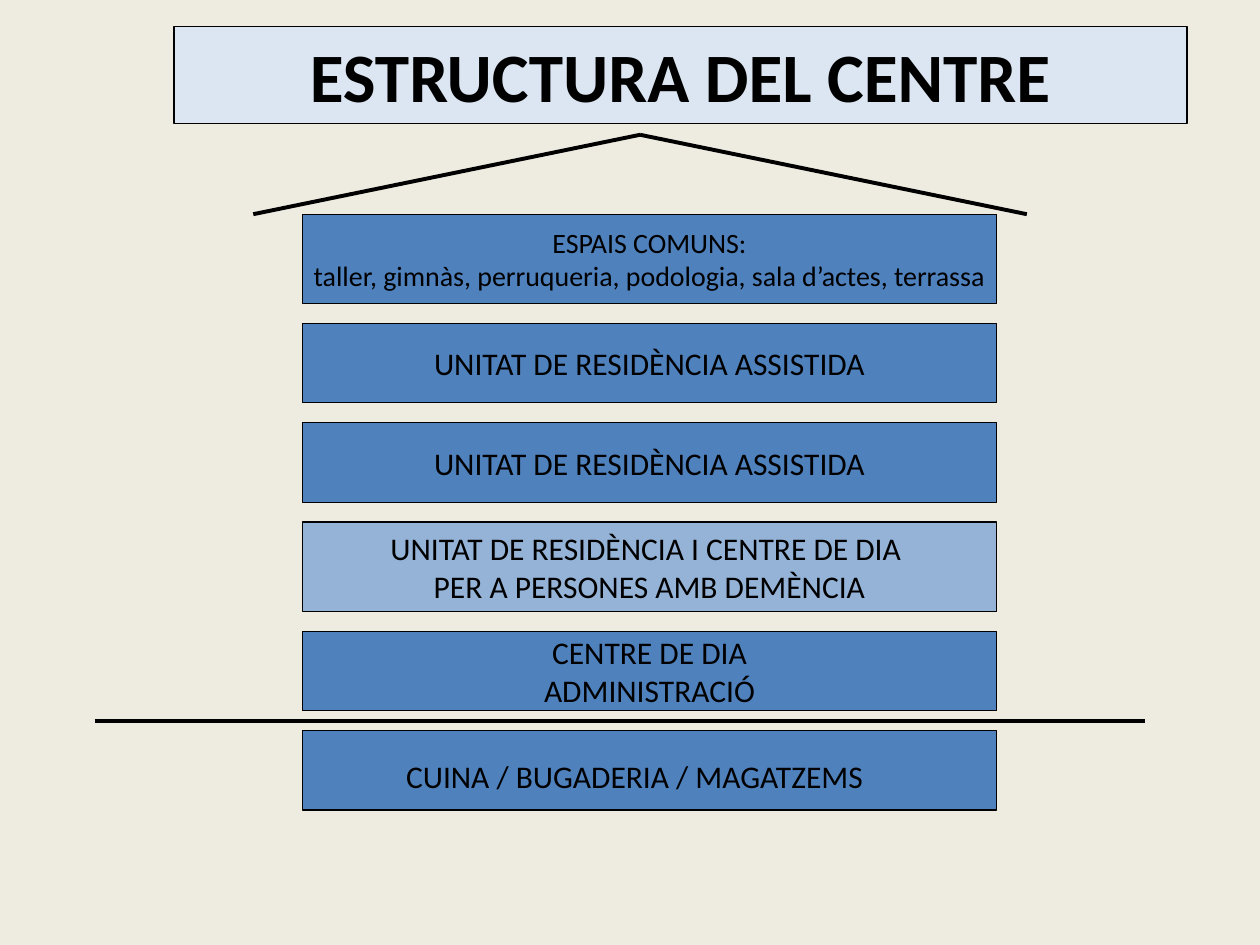
from dataclasses import dataclass

from pptx import Presentation
from pptx.dml.color import RGBColor
from pptx.enum.shapes import MSO_CONNECTOR, MSO_SHAPE
from pptx.enum.text import MSO_ANCHOR, MSO_AUTO_SIZE, PP_ALIGN
from pptx.oxml.ns import qn
from pptx.util import Inches, Pt

RECTANGLE = MSO_SHAPE.RECTANGLE
STRAIGHT = MSO_CONNECTOR.STRAIGHT
MIDDLE = MSO_ANCHOR.MIDDLE
CENTER = PP_ALIGN.CENTER
NO_AUTOFIT = MSO_AUTO_SIZE.NONE
TITLE_ONLY = 5


@dataclass(frozen=True)
class Theme:
    font: str = "Calibri"
    background: RGBColor = RGBColor.from_string("EEECE1")
    title_fill: RGBColor = RGBColor.from_string("DCE6F2")
    floor_fill: RGBColor = RGBColor.from_string("4F81BD")
    dementia_fill: RGBColor = RGBColor.from_string("95B3D7")
    ink: RGBColor = RGBColor.from_string("000000")
    title_size: float = 39.6
    floor_size: float = 18
    common_size: float = 16
    outline: float = 0.75
    stroke: float = 2.25


THEME = Theme()

# Each floor: lines of text, height in rows, fill, type size
FLOORS = [
    (["ESPAIS COMUNS:",
      "taller, gimnàs, perruqueria, podologia, sala d’actes, terrassa"],
     9, THEME.floor_fill, THEME.common_size),
    (["UNITAT DE RESIDÈNCIA ASSISTIDA"], 8, THEME.floor_fill, THEME.floor_size),
    (["UNITAT DE RESIDÈNCIA ASSISTIDA"], 8, THEME.floor_fill, THEME.floor_size),
    (["UNITAT DE RESIDÈNCIA I CENTRE DE DIA ", "PER A PERSONES AMB DEMÈNCIA"],
     9, THEME.dementia_fill, THEME.floor_size),
    (["CENTRE DE DIA", "ADMINISTRACIÓ"], 8, THEME.floor_fill, THEME.floor_size),
]
BASEMENT = "CUINA / BUGADERIA / MAGATZEMS"
BASEMENT_ROWS = 8
GAP_ROWS = 2
TOTAL_ROWS = sum(floor[1] + GAP_ROWS for floor in FLOORS) + BASEMENT_ROWS


def paint(shape, fill):
    shape.fill.solid()
    shape.fill.fore_color.rgb = fill
    shape.line.color.rgb = THEME.ink
    shape.line.width = Pt(THEME.outline)


def write(shape, lines, size, bold=False, wrap=False):
    frame = shape.text_frame
    frame.text = "\n".join(lines)
    frame.word_wrap = wrap
    frame.vertical_anchor = MIDDLE
    for paragraph in frame.paragraphs:
        paragraph.alignment = CENTER
        paragraph.font.name = THEME.font
        paragraph.font.size = Pt(size)
        paragraph.font.bold = bold
        paragraph.font.color.rgb = THEME.ink


def add_block(slide, box, fill):
    block = slide.shapes.add_shape(RECTANGLE, *map(Inches, box))
    block.shadow.inherit = False
    paint(block, fill)
    return block


def add_stroke(slide, start, end):
    stroke = slide.shapes.add_connector(STRAIGHT, *map(Inches, start + end))
    stroke.line.color.rgb = THEME.ink
    stroke.line.width = Pt(THEME.stroke)
    properties = stroke._element.spPr
    properties.append(properties.makeelement(qn("a:effectLst"), {}))


def place_title(slide, box):
    title = slide.shapes.title
    title.left, title.top, title.width, title.height = map(Inches, box)
    paint(title, THEME.title_fill)
    write(title, ["ESTRUCTURA DEL CENTRE"], THEME.title_size, bold=True, wrap=True)
    title.text_frame.auto_size = NO_AUTOFIT


def add_roof(slide, box):
    left, top, width, height = box
    apex = (left + width / 2, top)
    add_stroke(slide, (left, top + height), apex)
    add_stroke(slide, apex, (left + width, top + height))


def add_building(slide, box, ground_span):
    """Stack the floors from the top, then the ground line and the basement."""
    left, top, width, height = box
    row = height / TOTAL_ROWS
    for lines, rows, fill, size in FLOORS:
        block = add_block(slide, (left, top, width, rows * row), fill)
        write(block, lines, size)
        top += (rows + GAP_ROWS) * row

    add_block(slide, (left, top, width, BASEMENT_ROWS * row), THEME.floor_fill)
    label_box = (left - row, top + 2 * row, width - row, 5 * row)
    label = slide.shapes.add_textbox(*map(Inches, label_box))
    write(label, [BASEMENT], THEME.floor_size, wrap=True)

    ground = top - GAP_ROWS * row / 2
    add_stroke(slide, (ground_span[0], ground), (ground_span[1], ground))


def main():
    deck = Presentation()
    deck.slide_width, deck.slide_height = Inches(10), Inches(7.5)
    slide = deck.slides.add_slide(deck.slide_layouts[TITLE_ONLY])
    slide.background.fill.solid()
    slide.background.fill.fore_color.rgb = THEME.background

    place_title(slide, (1.38, 0.21, 8.04, 0.77))
    add_building(slide, (2.4, 1.7, 5.51, 4.73), ground_span=(0.75, 9.09))
    add_roof(slide, (2.01, 1.07, 6.14, 0.63))
    deck.save("out.pptx")


if __name__ == "__main__":
    main()
